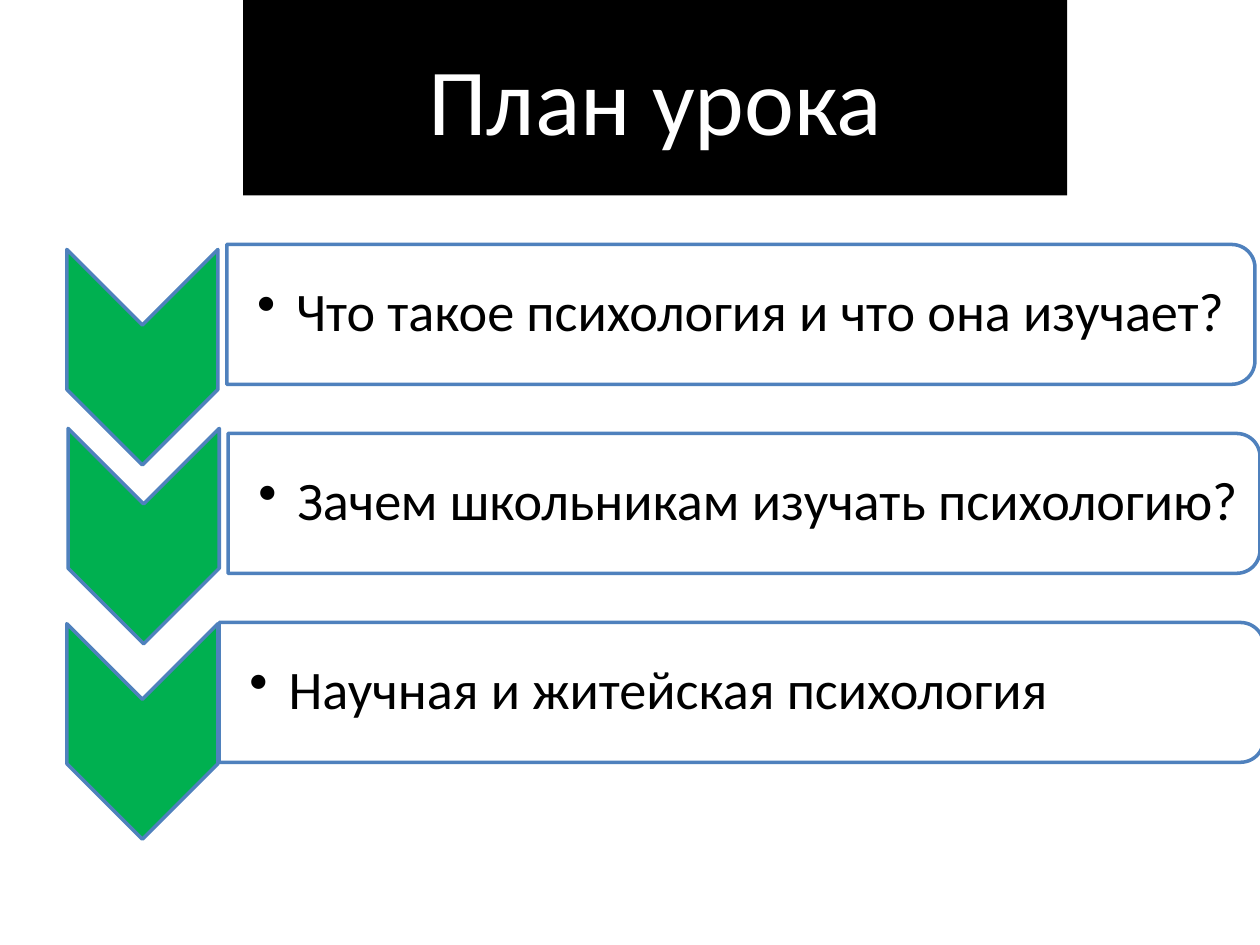
from lxml import etree
from pptx import Presentation
from pptx.dml.color import RGBColor
from pptx.enum import shapes, text
from pptx.oxml import ns
from pptx.util import Inches, Pt

# Content: text, chevron left and top, bar left and width, label width
TITLE = "План урока"
STEPS = [
    ("Что такое психология и что она изучает?", 0.53, 1.98, 1.8, 8.16, 8.1),
    ("Зачем школьникам изучать психологию?", 0.54, 3.4, 1.81, 8.19, 8.14),
    ("Научная и житейская психология", 0.53, 4.95, 1.74, 8.29, 8.24),
]
FONT = "Calibri"
BLACK, WHITE, GREEN, BLUE = "000000", "FFFFFF", "00B050", "4F81BD"
CHEVRON_WIDTH, CHEVRON_HEIGHT = 1.2, 1.71
BAR_TOP, BAR_HEIGHT, BAR_PITCH = 1.94, 1.11, 1.5
LABEL_HEIGHT = 1


def color(hex_string):
    return RGBColor.from_string(hex_string)


def fill_solid(shape, hex_string):
    shape.fill.solid()
    shape.fill.fore_color.rgb = color(hex_string)


def add_run(paragraph, words, size, hex_string):
    run = paragraph.add_run()
    run.text = words
    run.font.name = FONT
    run.font.size = Pt(size)
    run.font.color.rgb = color(hex_string)


def add_turned(slide, kind, left, top, width, height, fill):
    """Add a shape turned by 90 degrees that covers the given box."""
    shape = slide.shapes.add_shape(
        kind,
        Inches(left + (width - height) / 2), Inches(top + (height - width) / 2),
        Inches(height), Inches(width))
    shape.rotation = 90
    shape.shadow.inherit = False
    fill_solid(shape, fill)
    shape.line.color.rgb = color(BLUE)
    shape.line.width = Pt(2)
    return shape


def set_alpha(shape, percent):
    fill = shape.fill.fore_color._xFill
    etree.SubElement(fill[0], ns.qn("a:alpha"), val=str(percent * 1000))


def add_label(slide, words, left, top, width):
    box = slide.shapes.add_textbox(
        Inches(left), Inches(top), Inches(width), Inches(LABEL_HEIGHT))
    frame = box.text_frame
    frame.word_wrap = True
    frame.vertical_anchor = text.MSO_ANCHOR.MIDDLE
    frame.margin_left = Inches(0.24)
    frame.margin_top = frame.margin_right = frame.margin_bottom = Inches(0.02)
    paragraph = frame.paragraphs[0]
    paragraph.level = 1
    paragraph.line_spacing = 0.9
    add_run(paragraph, words, 31, BLACK)
    # Bullet with hanging indent
    properties = paragraph._p.get_or_add_pPr()
    properties.set("marL", str(Inches(0.31)))
    properties.set("indent", str(-Inches(0.31)))
    etree.SubElement(properties, ns.qn("a:buChar"), char="•")


def main():
    presentation = Presentation()
    presentation.slide_width, presentation.slide_height = Inches(10), Inches(7.5)
    slide = presentation.slides.add_slide(presentation.slide_layouts[5])

    # Title
    title = slide.shapes.title
    title.left, title.top = Inches(1.93), Inches(0)
    title.width, title.height = Inches(6.54), Inches(1.55)
    fill_solid(title, BLACK)
    title.text_frame.vertical_anchor = text.MSO_ANCHOR.MIDDLE
    paragraph = title.text_frame.paragraphs[0]
    paragraph.alignment = text.PP_ALIGN.CENTER
    add_run(paragraph, TITLE, 54, WHITE)

    # Steps: chevron, bar and label
    kinds = shapes.MSO_SHAPE
    for index, step in enumerate(STEPS):
        words, chevron_left, chevron_top, bar_left, bar_width, label_width = step
        bar_top = BAR_TOP + index * BAR_PITCH
        add_turned(slide, kinds.CHEVRON, chevron_left, chevron_top,
                   CHEVRON_WIDTH, CHEVRON_HEIGHT, GREEN)
        bar = add_turned(slide, kinds.ROUND_2_SAME_RECTANGLE, bar_left, bar_top,
                         bar_width, BAR_HEIGHT, WHITE)
        set_alpha(bar, 90)
        label_top = bar_top + (BAR_HEIGHT - LABEL_HEIGHT) / 2
        add_label(slide, words, bar_left, label_top, label_width)

    presentation.save("out.pptx")


if __name__ == "__main__":
    main()
